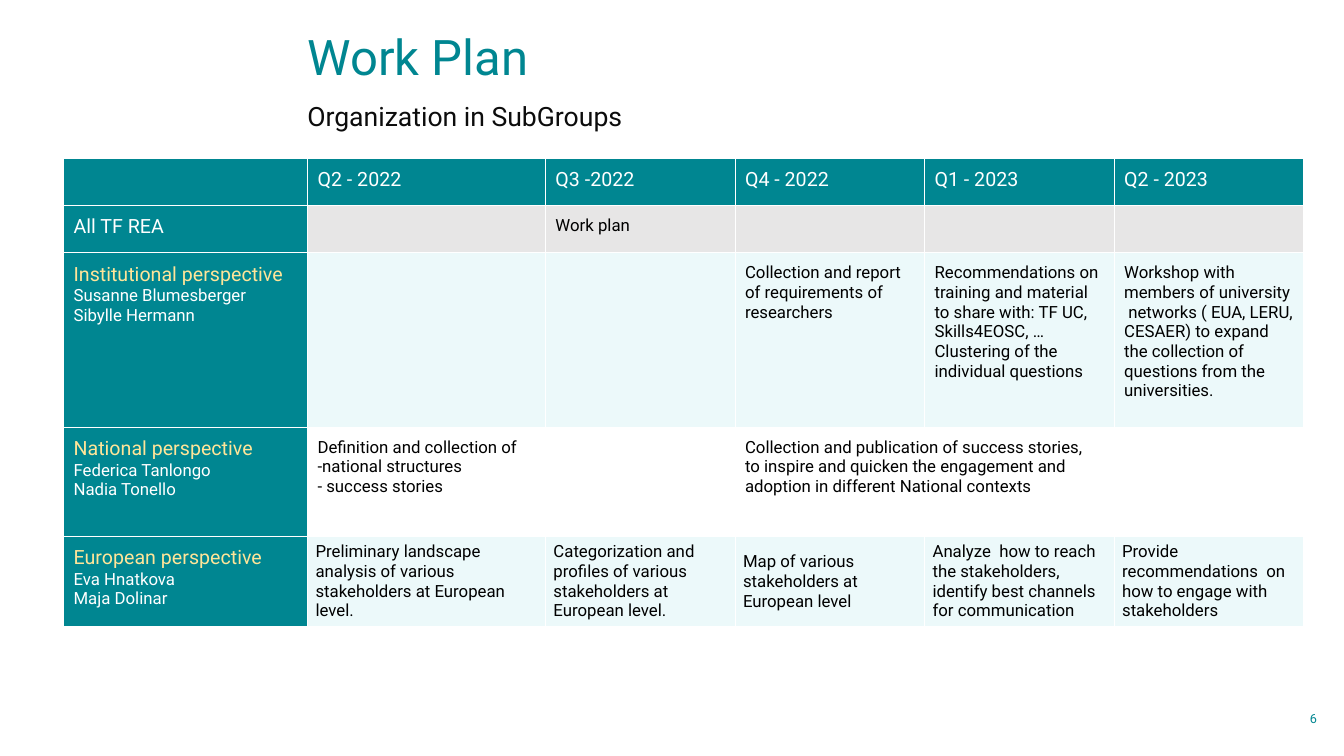
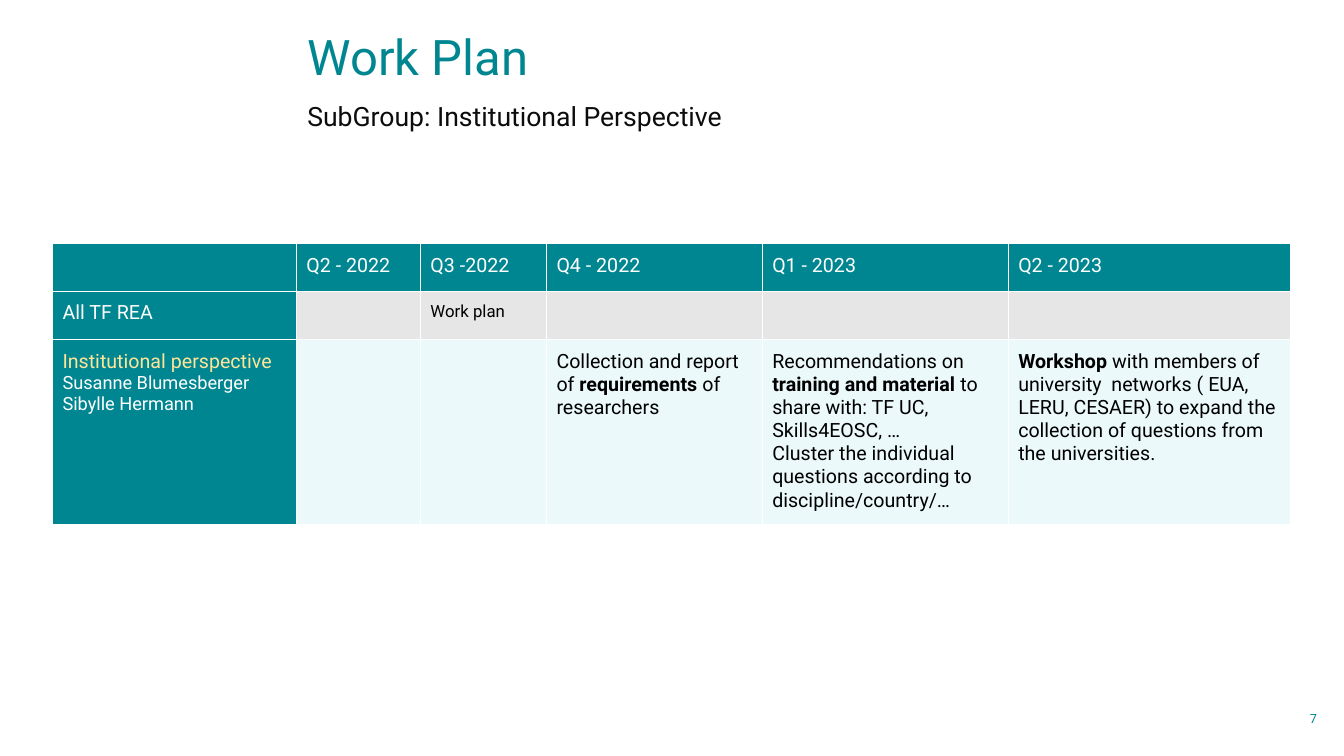
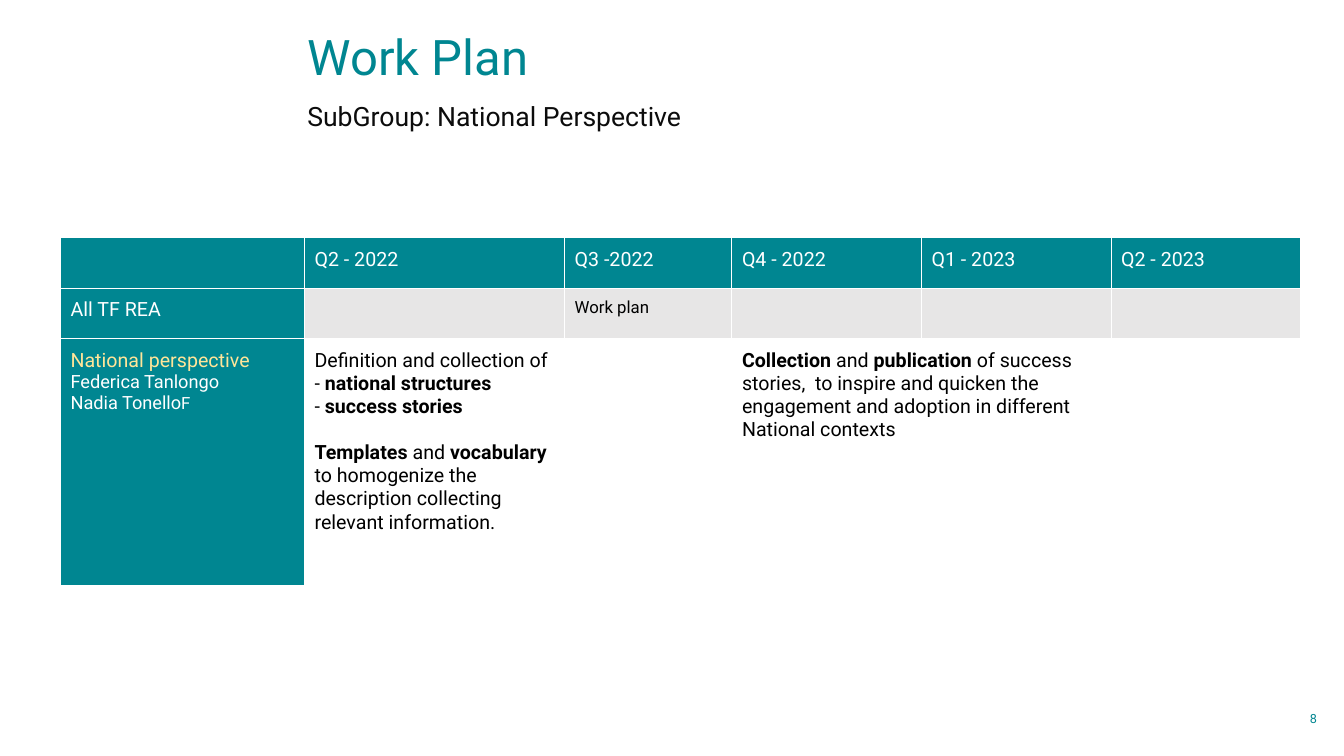
from lxml import etree
from pptx import Presentation
from pptx.dml.color import RGBColor
from pptx.enum.text import MSO_ANCHOR, PP_ALIGN
from pptx.oxml.ns import qn
from pptx.util import Inches, Pt

TOP, MIDDLE = MSO_ANCHOR.TOP, MSO_ANCHOR.MIDDLE
LEFT, RIGHT = PP_ALIGN.LEFT, PP_ALIGN.RIGHT

FONT = "Roboto"
COLORS = {
    "teal": "008691", "white": "FFFFFF", "black": "000000", "ink": "0C0C0C",
    "gray": "E7E6E6", "mint": "ECF9FA", "yellow": "FFE599",
}
BORDER_WIDTH = Pt(0.75)
HEAD_SIZE, NOTE_SIZE = 14, 12
TITLE = "Work Plan"
QUARTERS = ["Q2 - 2022", "Q3 -2022", "Q4 - 2022", "Q1 - 2023", "Q2 - 2023"]
ALL_GROUPS = ["All TF REA", "", "Work plan", "", "", ""]

# Content: *bold* in texts, | before a smaller suffix in names, None continues a merged cell
PLANS = [
    {
        "number": 6, "subtitle": "Organization in SubGroups",
        "at": (0.63, 1.57), "columns": [2.42, 2.36] + [1.88] * 4,
        "rows": [0.47, 0.47, 1.73, 1.08, 0.9], "name_size": 12, "text_size": 12,
        "groups": [
            {
                "name": "Institutional perspective", "fill": "mint",
                "people": ["Susanne Blumesberger", "Sibylle Hermann"],
                "tasks": [
                    [], [],
                    ["Collection and report of requirements of researchers"],
                    ["Recommendations on training and material to share with: TF UC, Skills4EOSC, …",
                     "Clustering of the individual questions"],
                    ["Workshop with members of university  networks ( EUA, LERU, CESAER) "
                     "to expand the collection of questions from the universities."],
                ],
            },
            {
                "name": "National perspective", "fill": "white",
                "people": ["Federica Tanlongo", "Nadia Tonello"],
                "tasks": [
                    ["Definition and collection of", "-national structures", "- success stories"],
                    [],
                    ["Collection and publication of success stories,  to inspire and quicken "
                     "the engagement and adoption in different National contexts"],
                    None, [],
                ],
            },
            {
                "name": "European perspective", "fill": "mint", "compact": True,
                "people": ["Eva Hnatkova", "Maja Dolinar"],
                "tasks": [
                    ["Preliminary landscape analysis of various stakeholders at European level."],
                    ["Categorization and profiles of various stakeholders at European level."],
                    ["Map of various stakeholders at European level"],
                    ["Analyze  how to reach the stakeholders, identify best channels for communication"],
                    ["Provide recommendations  on how to engage with stakeholders"],
                ],
            },
        ],
    },
    {
        "number": 7, "subtitle": "SubGroup: Institutional Perspective",
        "at": (0.52, 2.42), "columns": [2.42, 1.23, 1.25, 2.14, 2.44, 2.8],
        "rows": [0.47, 0.48, 1.8], "name_size": 13, "text_size": 14,
        "groups": [
            {
                "name": "Institutional perspective", "fill": "mint",
                "people": ["Susanne Blumesberger", "Sibylle Hermann"],
                "tasks": [
                    [], [],
                    ["Collection and report of *requirements *of researchers"],
                    ["Recommendations on *training and material* to share with: TF UC, Skills4EOSC, …",
                     "Cluster the individual questions according to discipline/country/…"],
                    ["*Workshop* with members of university  networks ( EUA, LERU, CESAER) "
                     "to expand the collection of questions from the universities."],
                ],
            },
        ],
    },
    {
        "number": 8, "subtitle": "SubGroup: National Perspective",
        "at": (0.6, 2.36), "columns": [2.42, 2.58, 1.66] + [1.88] * 3,
        "rows": [0.5, 0.5, 2.45], "name_size": 13, "text_size": 14,
        "groups": [
            {
                "name": "National perspective", "fill": "white",
                "people": ["Federica Tanlongo", "Nadia Tonello|F"],
                "tasks": [
                    ["Definition and collection of", "- *national structures*", "- *success stories*",
                     "*Templates* and *vocabulary* to homogenize the description "
                     "collecting relevant information."],
                    [],
                    ["*Collection* and *publication* of success stories,  to inspire and quicken "
                     "the engagement and adoption in different National contexts"],
                    None, [],
                ],
            },
        ],
    },
]
GAP_BEFORE = {"*Templates*": Pt(16.4)}


def rgb(color):
    return RGBColor.from_string(COLORS[color])


def add_run(paragraph, text, size, color, bold=False):
    run = paragraph.add_run()
    run.text = text
    run.font.name, run.font.size, run.font.bold = FONT, Pt(size), bold
    run.font.color.rgb = rgb(color)


def add_label(slide, text, box, size, color, anchor=MIDDLE, align=LEFT, spacing=1.0):
    frame = slide.shapes.add_textbox(*map(Inches, box)).text_frame
    frame.word_wrap = True
    frame.vertical_anchor = anchor
    paragraph = frame.paragraphs[0]
    paragraph.alignment, paragraph.line_spacing = align, spacing
    add_run(paragraph, text, size, color)


def style_cell(cell, fill, margins=(0.1, 0.1), anchor=TOP):
    properties = cell._tc.get_or_add_tcPr()
    for side in ("a:lnL", "a:lnR", "a:lnT", "a:lnB"):
        line = etree.SubElement(properties, qn(side), w=str(BORDER_WIDTH))
        solid = etree.SubElement(line, qn("a:solidFill"))
        etree.SubElement(solid, qn("a:srgbClr"), val=COLORS["white"])
    cell.fill.solid()
    cell.fill.fore_color.rgb = rgb(fill)
    cell.margin_left = cell.margin_right = Inches(margins[0])
    cell.margin_top = cell.margin_bottom = Inches(margins[1])
    cell.vertical_anchor = anchor


def fill_cell(cell, paragraphs, fill, **style):
    """Each paragraph is a list of (text, size, color, bold) runs."""
    if not paragraphs:
        style["margins"] = (0, 0)
    style_cell(cell, fill, **style)
    for index, runs in enumerate(paragraphs):
        frame = cell.text_frame
        paragraph = frame.add_paragraph() if index else frame.paragraphs[0]
        if runs[0][0] == "" and len(runs) > 1:
            gap = GAP_BEFORE.get(f"*{runs[1][0]}*")
            if gap:
                paragraph.space_before = gap
        for text, size, color, bold in runs:
            if text:
                add_run(paragraph, text, size, color, bold)


def task_runs(text, size):
    return [(part, size, "black", index % 2 == 1) for index, part in enumerate(text.split("*"))]


def group_label(group, name_size):
    lines = [[(group["name"], HEAD_SIZE, "yellow", False)]]
    for person in group["people"]:
        parts = zip(person.split("|"), (name_size, NOTE_SIZE))
        lines.append([(part, size, "white", False) for part, size in parts])
    return lines


def add_plan_table(slide, plan):
    columns, rows = plan["columns"], plan["rows"]
    box = (*plan["at"], sum(columns), sum(rows))
    table = slide.shapes.add_table(len(rows), len(columns), *map(Inches, box)).table
    table.first_row = table.horz_banding = False
    for column, width in zip(table.columns, columns):
        column.width = Inches(width)
    for row, height in zip(table.rows, rows):
        row.height = Inches(height)

    # Quarter headings and the row for all groups
    for index, text in enumerate([""] + QUARTERS):
        fill_cell(table.cell(0, index), [[(text, HEAD_SIZE, "white", False)]] if text else [], "teal")
    for index, text in enumerate(ALL_GROUPS):
        size, color, fill = (NOTE_SIZE, "black", "gray") if index else (HEAD_SIZE, "white", "teal")
        fill_cell(table.cell(1, index), [[(text, size, color, False)]] if text else [], fill)

    # One row per subgroup
    for row, group in enumerate(plan["groups"], start=2):
        fill_cell(table.cell(row, 0), group_label(group, plan["name_size"]), "teal")
        style = {"margins": (0.08, 0), "anchor": MIDDLE} if group.get("compact") else {}
        for column, task in enumerate(group["tasks"], start=1):
            cell = table.cell(row, column)
            lines = [task_runs(text, plan["text_size"]) for text in task or []]
            fill_cell(cell, lines, group["fill"], **style)
            if task is None:
                table.cell(row, column - 1).merge(cell)


def main():
    presentation = Presentation()
    presentation.slide_width, presentation.slide_height = Inches(13.33), Inches(7.5)
    for plan in PLANS:
        slide = presentation.slides.add_slide(presentation.slide_layouts[6])
        add_label(slide, TITLE, (2.95, 0.26, 9.69, 0.66), 35, "teal", spacing=0.9)
        add_label(slide, plan["subtitle"], (2.95, 0.98, 9.69, 0.4), 19, "ink", anchor=TOP, spacing=0.9)
        add_plan_table(slide, plan)
        add_label(slide, str(plan["number"]), (11.75, 7.02, 1.41, 0.22), 9, "teal", align=RIGHT)
    presentation.save("out.pptx")


if __name__ == "__main__":
    main()
